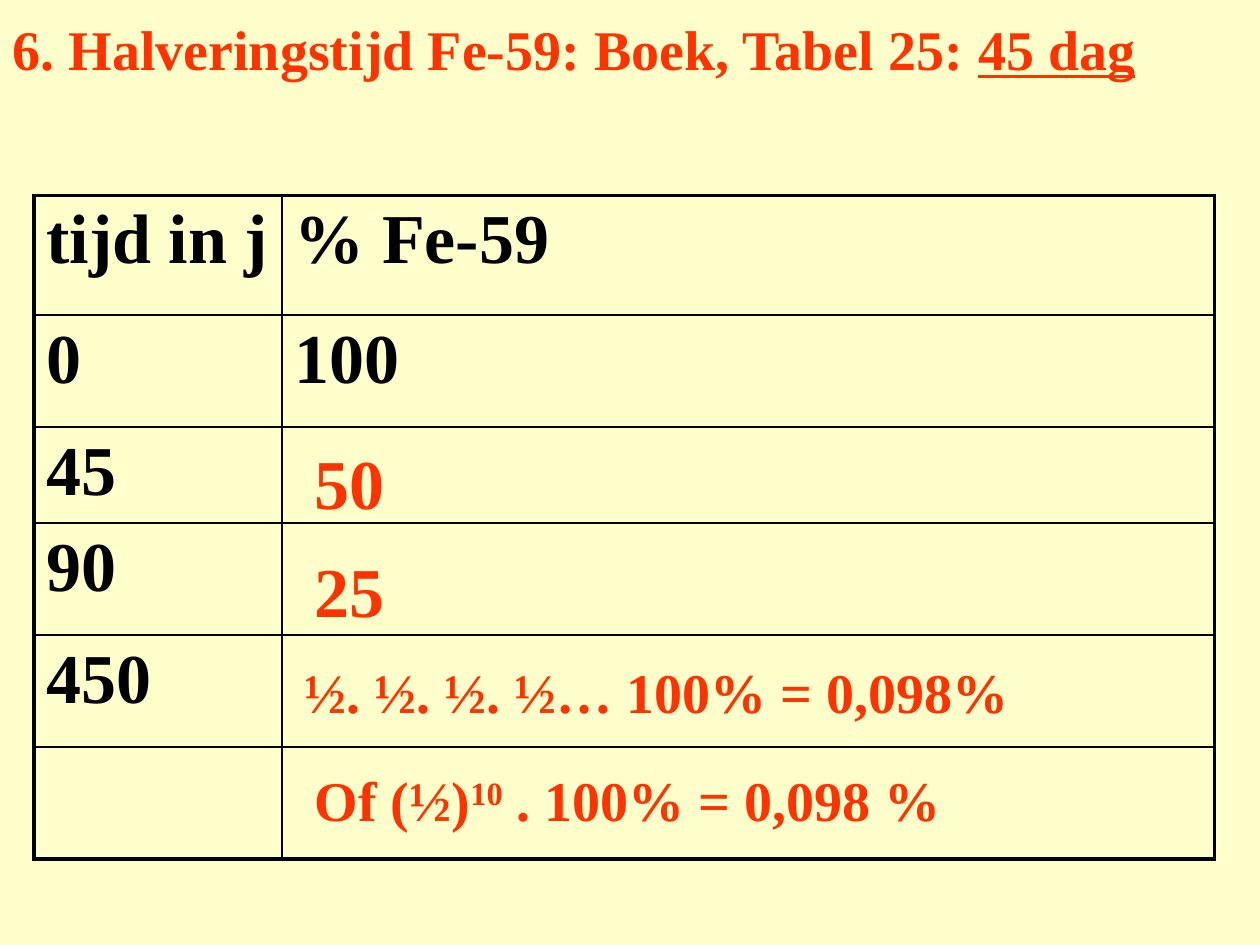
from dataclasses import dataclass

from lxml import etree
from pptx import Presentation
from pptx.dml.color import RGBColor
from pptx.enum.text import MSO_ANCHOR, MSO_AUTO_SIZE, PP_ALIGN
from pptx.oxml.ns import qn
from pptx.util import Inches, Pt

LEFT = PP_ALIGN.LEFT
TOP = MSO_ANCHOR.TOP
MIDDLE = MSO_ANCHOR.MIDDLE
GROW = MSO_AUTO_SIZE.SHAPE_TO_FIT_TEXT
NO_RESIZE = MSO_AUTO_SIZE.NONE

CREAM = RGBColor(0xFF, 0xFF, 0xCC)
RED = RGBColor(0xFF, 0x33, 0x00)
BLACK = RGBColor(0x00, 0x00, 0x00)
FONT = "Times New Roman"
OUTER_WIDTH = 2.25
INNER_WIDTH = 1

COLUMN_WIDTHS = (1.97, 7.4)
ROW_HEIGHTS = (0.95, 0.89, 0.76, 0.89, 0.89, 0.89)
ROWS = (
    ("tijd in j", "% Fe-59"),
    ("0", "100"),
    ("45", ""),
    ("90", ""),
    ("450", ""),
    ("", ""),
)


@dataclass(frozen=True)
class Span:
    text: str
    underline: bool = False
    raised: bool = False


@dataclass(frozen=True)
class Answer:
    left: float
    top: float
    width: float
    height: float
    size: int
    space_percent: int
    spans: tuple[Span, ...]


TITLE = (Span("6. Halveringstijd Fe-59: Boek, Tabel 25: "), Span("45 dag", underline=True))
ANSWERS = (
    Answer(2.4, 3.44, 1.25, 0.77, 40, 50, (Span("50"),)),
    Answer(2.4, 4.3, 1.25, 0.77, 40, 50, (Span("25"),)),
    Answer(2.32, 5.17, 5.98, 0.63, 32, 50, (Span("½. ½. ½. ½… 100% = 0,098%"),)),
    Answer(2.4, 6.03, 5.43, 0.63, 32, 20,
           (Span("Of (½)"), Span("10", raised=True), Span(" . 100% = 0,098 %"))),
)


def write_spans(para, spans: tuple[Span, ...], size: int, color: RGBColor) -> None:
    para.alignment = LEFT
    for span in spans:
        run = para.add_run()
        run.text = span.text
        formats = {"name": FONT, "size": Pt(size), "bold": True, "underline": span.underline}
        for name, value in formats.items():
            setattr(run.font, name, value)
        run.font.color.rgb = color
        if span.raised:
            run.font._element.set("baseline", "30000")


def set_space_before(para, percent: int) -> None:
    para.space_before = Pt(0)
    spacing = para._p.pPr.find(qn("a:spcBef"))
    spacing.clear()
    etree.SubElement(spacing, qn("a:spcPct"), val=str(percent * 1000))


def set_borders(cell, widths: dict[str, float]) -> None:
    properties = cell._tc.get_or_add_tcPr()
    for position, (side, width) in enumerate(widths.items()):
        line = etree.Element(qn(f"a:{side}"), w=str(Pt(width)))
        fill = etree.SubElement(line, qn("a:solidFill"))
        etree.SubElement(fill, qn("a:srgbClr"), val=str(BLACK))
        properties.insert(position, line)


def add_decay_table(page) -> None:
    row_count, column_count = len(ROWS), len(COLUMN_WIDTHS)
    frame = page.shapes.add_table(
        row_count, column_count, Inches(0.27), Inches(1.55),
        Inches(sum(COLUMN_WIDTHS)), Inches(sum(ROW_HEIGHTS)))
    table = frame.table
    table.first_row = False
    table.horz_banding = False
    for column, width in zip(table.columns, COLUMN_WIDTHS):
        column.width = Inches(width)
    for row, height in zip(table.rows, ROW_HEIGHTS):
        row.height = Inches(height)
    for row_index, texts in enumerate(ROWS):
        for column_index, text in enumerate(texts):
            cell = table.cell(row_index, column_index)
            cell.fill.background()
            on_edge = {
                "lnL": column_index == 0,
                "lnR": column_index == column_count - 1,
                "lnT": row_index == 0,
                "lnB": row_index == row_count - 1,
            }
            set_borders(cell, {side: OUTER_WIDTH if edge else INNER_WIDTH
                               for side, edge in on_edge.items()})
            if text:
                para = cell.text_frame.paragraphs[0]
                write_spans(para, (Span(text),), 40, BLACK)
                set_space_before(para, 20)


def add_answer(page, answer: Answer) -> None:
    box = page.shapes.add_textbox(
        Inches(answer.left), Inches(answer.top), Inches(answer.width), Inches(answer.height))
    frame = box.text_frame
    for name, value in {"word_wrap": True, "auto_size": GROW, "vertical_anchor": TOP}.items():
        setattr(frame, name, value)
    para = frame.paragraphs[0]
    write_spans(para, answer.spans, answer.size, RED)
    set_space_before(para, answer.space_percent)


def format_title(page) -> None:
    title = page.shapes.title
    bounds = {"left": 0, "top": -0.08, "width": 10, "height": 0.92}
    for name, value in bounds.items():
        setattr(title, name, Inches(value))
    frame = title.text_frame
    for name, value in {"word_wrap": True, "auto_size": NO_RESIZE,
                        "vertical_anchor": MIDDLE}.items():
        setattr(frame, name, value)
    write_spans(frame.paragraphs[0], TITLE, 32, RED)


def main() -> None:
    deck = Presentation()
    deck.slide_width = Inches(10)
    deck.slide_height = Inches(7.5)
    page = deck.slides.add_slide(deck.slide_layouts[5])
    page.background.fill.solid()
    page.background.fill.fore_color.rgb = CREAM
    format_title(page)
    add_decay_table(page)
    for answer in ANSWERS:
        add_answer(page, answer)
    deck.save("out.pptx")


if __name__ == "__main__":
    main()
